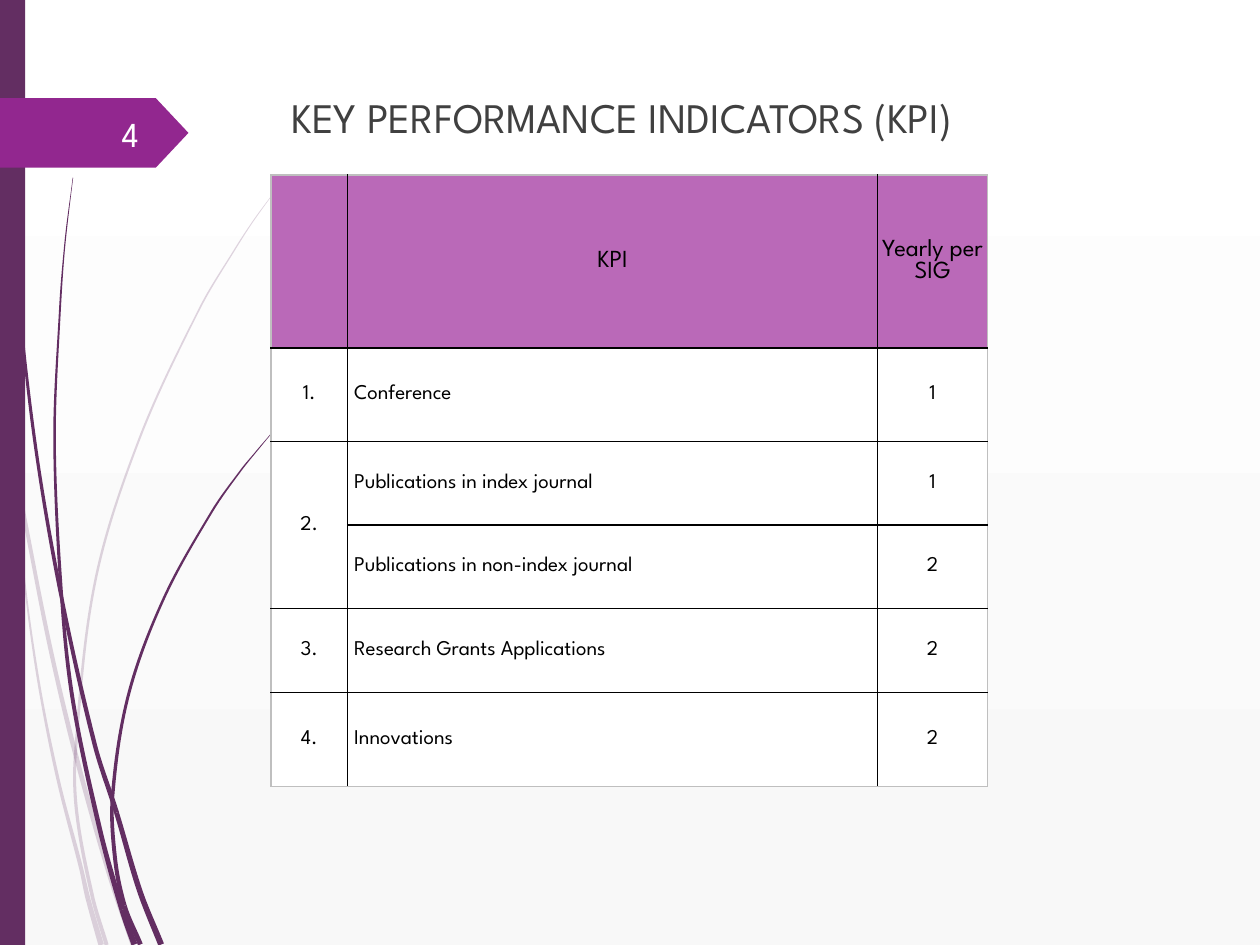
"""Build the key performance indicators slide."""
import math
from dataclasses import dataclass
from typing import Optional

from lxml import etree
from pptx import Presentation
from pptx import util as u
from pptx.dml.color import RGBColor
from pptx.enum import shapes, text
from pptx.oxml.ns import qn

Point = tuple[float, float]


@dataclass(frozen=True)
class Theme:
    """Colours, font and type sizes of the slide."""
    font: str = "League Spartan"
    plum: str = "632E62"
    tag: str = "92278F"
    header: str = "BA69B8"
    white: str = "FFFFFF"
    backdrop: str = "F8F8F8"
    title_text: str = "404040"
    number_text: str = "FEFFFF"
    black: str = "000000"
    frame: str = "BFBFBF"
    title_size: float = 24
    number_size: float = 20
    header_size: float = 14
    body_size: float = 12


@dataclass(frozen=True)
class Strand:
    """A tapered curve through points in centimetres, cut at the break indices."""
    points: tuple[Point, ...]
    breaks: tuple[int, ...]
    start_width: float
    end_width: float
    opacity: Optional[int] = None


@dataclass(frozen=True)
class Indicator:
    """One row of the table; an empty number joins the row above."""
    number: str
    name: str
    target: str
    height: float


THEME = Theme()
STRANDS = (
    Strand(((0, 7.38), (0.21, 8.85), (0.66, 11.3), (1.05, 13.23), (1.54, 15.27),
            (2.2, 17.6), (2.69, 19.05)), (1, 4), 0.06, 0.11, 20),
    Strand(((0.2, 8.89), (0.52, 11.93), (0.8, 13.87), (1.18, 15.75), (1.63, 17.48),
            (1.78, 18.14), (2.04, 19.05)), (5,), 0.02, 0.11, 20),
    Strand(((5.51, 3.9), (5.11, 4.45), (4.74, 5.02), (4.03, 6.21), (2.81, 8.85),
            (1.92, 11.72), (1.52, 15.2), (1.55, 16.41), (1.86, 18.06),
            (2.15, 19.05)), (6, 8), 0.01, 0.08, 20),
    Strand(((0.06, 0), (0.14, 2.79), (0.37, 5.92), (0.72, 9.02), (1.23, 11.99),
            (1.91, 15.01), (2.35, 16.38), (2.82, 17.96), (3.25, 19.04)),
           (4, 6), 0.03, 0.12),
    Strand(((1.47, 3.58), (1.31, 4.9), (1.21, 6.22), (1.1, 8.86), (1.24, 12),
            (1.47, 14.13), (2.01, 16.71), (2.46, 18.34), (2.71, 19.04)),
           (4, 7), 0.01, 0.12),
    Strand(((5.47, 8.74), (5.16, 9.11), (4.85, 9.49), (4.28, 10.3), (3.3, 12.07),
            (2.59, 14.01), (2.27, 16.05), (2.32, 17.3), (2.51, 18.26),
            (2.83, 19.04)), (6, 8), 0.01, 0.1),
)
COLUMN_WIDTHS = (1.55, 10.68, 2.22)
HEADINGS = ("", "KPI", "Yearly per SIG")
HEADER_HEIGHT = 3.49
INDICATORS = (
    Indicator("1.", "Conference", "1", 1.88),
    Indicator("2.", "Publications in index journal", "1", 1.68),
    Indicator("", "Publications in non-index journal", "2", 1.69),
    Indicator("3.", "Research Grants Applications", "2", 1.69),
    Indicator("4.", "Innovations", "2", 1.89),
)


def rgb(color: str) -> RGBColor:
    """Turn a hex string into a colour."""
    return RGBColor.from_string(color)


def style_paragraph(paragraph, size: float, color: str, alignment) -> None:
    """Format a whole paragraph."""
    paragraph.alignment = alignment
    paragraph.font.name = THEME.font
    paragraph.font.size = u.Pt(size)
    paragraph.font.color.rgb = rgb(color)


def fill_shape(shape, color: str, opacity: Optional[int] = None) -> None:
    """Give a shape a plain fill without outline or shadow."""
    shape.shadow.inherit = False
    shape.line.fill.background()
    shape.fill.solid()
    shape.fill.fore_color.rgb = rgb(color)
    if opacity is not None:
        for color_element in shape._element.spPr.iter(qn("a:srgbClr")):
            etree.SubElement(color_element, qn("a:alpha"), val=str(opacity * 1000))


def bezier(knots: list[Point], angles: list[float]) -> list[Point]:
    """List the knots with two handles between each pair."""
    result = [knots[0]]
    for a, b, start, end in zip(knots, knots[1:], angles, angles[1:]):
        reach = math.dist(a, b) / 3
        result += [(a[0] + reach * math.cos(start), a[1] + reach * math.sin(start)),
                   (b[0] - reach * math.cos(end), b[1] - reach * math.sin(end)), b]
    return result


def draw_ribbon(slide, left: list[Point], right: list[Point], strand: Strand) -> None:
    """Draw a closed ribbon between two curved edges."""
    outline = [(u.Cm(x), u.Cm(y)) for x, y in left + right[::-1]]
    builder = slide.shapes.build_freeform(*outline[0], scale=1.0)
    builder.add_line_segments(outline[1:], close=True)
    shape = builder.convert_to_shape()
    lines = list(shape._element.iter(qn("a:lnTo")))
    edge = len(left) - 1
    curved = lines[:edge] + lines[edge + 1:2 * edge + 1]
    for index in range(0, len(curved), 3):
        curve = etree.Element(qn("a:cubicBezTo"))
        curved[index].addprevious(curve)
        for line in curved[index:index + 3]:
            curve.append(line[0])
            line.getparent().remove(line)
    fill_shape(shape, THEME.plum, strand.opacity)


def draw_strand(slide, strand: Strand) -> None:
    """Draw a strand as ribbons that widen along its curve."""
    points, last = strand.points, len(strand.points) - 1
    angles, left, right = [], [], []
    for index, (x, y) in enumerate(points):
        before, after = points[max(index - 1, 0)], points[min(index + 1, last)]
        angle = math.atan2(after[1] - before[1], after[0] - before[0])
        growth = strand.end_width - strand.start_width
        half = (strand.start_width + growth * index / last) / 2
        dx, dy = half * math.sin(angle), half * math.cos(angle)
        angles.append(angle)
        left.append((x + dx, y - dy))
        right.append((x - dx, y + dy))
    for start, end in zip((0, *strand.breaks), (*strand.breaks, last)):
        part = slice(start, end + 1)
        draw_ribbon(slide, bezier(left[part], angles[part]),
                    bezier(right[part], angles[part]), strand)


def set_borders(cell, colors: dict[str, str]) -> None:
    """Draw one-point cell borders, keyed by side."""
    properties = cell._tc.get_or_add_tcPr()
    for side, color in colors.items():
        line = etree.SubElement(properties, qn(f"a:ln{side}"), w=str(u.Pt(1)))
        fill = etree.SubElement(line, qn("a:solidFill"))
        etree.SubElement(fill, qn("a:srgbClr"), val=color)


def draw_table(slide) -> None:
    """Draw the indicator table."""
    rows = [HEADINGS] + [(item.number, item.name, item.target) for item in INDICATORS]
    heights = [HEADER_HEIGHT] + [item.height for item in INDICATORS]
    table = slide.shapes.add_table(
        len(rows), len(COLUMN_WIDTHS), u.Cm(5.46), u.Cm(3.53),
        u.Cm(sum(COLUMN_WIDTHS)), u.Cm(sum(heights))).table
    for column, width in zip(table.columns, COLUMN_WIDTHS):
        column.width = u.Cm(width)
    for row, height in zip(table.rows, heights):
        row.height = u.Cm(height)
    last_row, last_column = len(rows) - 1, len(COLUMN_WIDTHS) - 1
    for r, values in enumerate(rows):
        for c, value in enumerate(values):
            cell = table.cell(r, c)
            outer = {"L": c == 0, "R": c == last_column, "T": r == 0, "B": r == last_row}
            set_borders(cell, {side: THEME.frame if edge else THEME.black
                               for side, edge in outer.items()})
            cell.fill.solid()
            cell.fill.fore_color.rgb = rgb(THEME.white if r else THEME.header)
            cell.vertical_anchor = text.MSO_ANCHOR.MIDDLE
            is_name = r > 0 and c == 1
            cell.margin_left = u.Cm(0.13 if is_name else 0)
            cell.margin_right = cell.margin_top = cell.margin_bottom = u.Cm(0)
            cell.text = value
            style_paragraph(cell.text_frame.paragraphs[0],
                            THEME.body_size if r else THEME.header_size, THEME.black,
                            text.PP_ALIGN.LEFT if is_name else text.PP_ALIGN.CENTER)
        if r and not values[0]:
            table.cell(r - 1, 0).merge(table.cell(r, 0))


def draw_title(slide) -> None:
    """Place and format the title."""
    title = slide.shapes.title
    title.left, title.top, title.width, title.height = map(u.Cm, (2.69, 1.71, 19.68, 15.29))
    frame = title.text_frame
    frame.text = "KEY PERFORMANCE INDICATORS (KPI)"
    frame.auto_size = text.MSO_AUTO_SIZE.NONE
    frame.vertical_anchor = text.MSO_ANCHOR.TOP
    style_paragraph(frame.paragraphs[0], THEME.title_size, THEME.title_text,
                    text.PP_ALIGN.CENTER)


def draw_number_tag(slide) -> None:
    """Draw the side bar and the slide number tag."""
    preset = shapes.MSO_SHAPE
    bar = slide.shapes.add_shape(preset.RECTANGLE, 0, 0, u.Cm(0.51), u.Cm(19.05))
    fill_shape(bar, THEME.plum)
    tag = slide.shapes.add_shape(preset.PENTAGON, 0, u.Cm(1.98), u.Cm(3.8), u.Cm(1.4))
    tag.adjustments[0] = 0.47
    fill_shape(tag, THEME.tag)
    box = slide.shapes.add_textbox(u.Cm(1.42), u.Cm(2.18), u.Cm(1.63), u.Cm(1.02))
    frame = box.text_frame
    frame.word_wrap = True
    frame.vertical_anchor = text.MSO_ANCHOR.MIDDLE
    frame.text = "4"
    style_paragraph(frame.paragraphs[0], THEME.number_size, THEME.number_text,
                    text.PP_ALIGN.RIGHT)


def main() -> None:
    """Build and save the presentation."""
    presentation = Presentation()
    presentation.slide_width, presentation.slide_height = u.Cm(25.4), u.Cm(19.05)
    slide = presentation.slides.add_slide(presentation.slide_layouts[5])
    background = slide.background.fill
    background.gradient()
    background.gradient_angle = 270
    for stop, color in zip(background.gradient_stops, (THEME.white, THEME.backdrop)):
        stop.color.rgb = rgb(color)
    for strand in STRANDS:
        draw_strand(slide, strand)
    draw_number_tag(slide)
    draw_title(slide)
    draw_table(slide)
    presentation.save("out.pptx")


if __name__ == "__main__":
    main()
